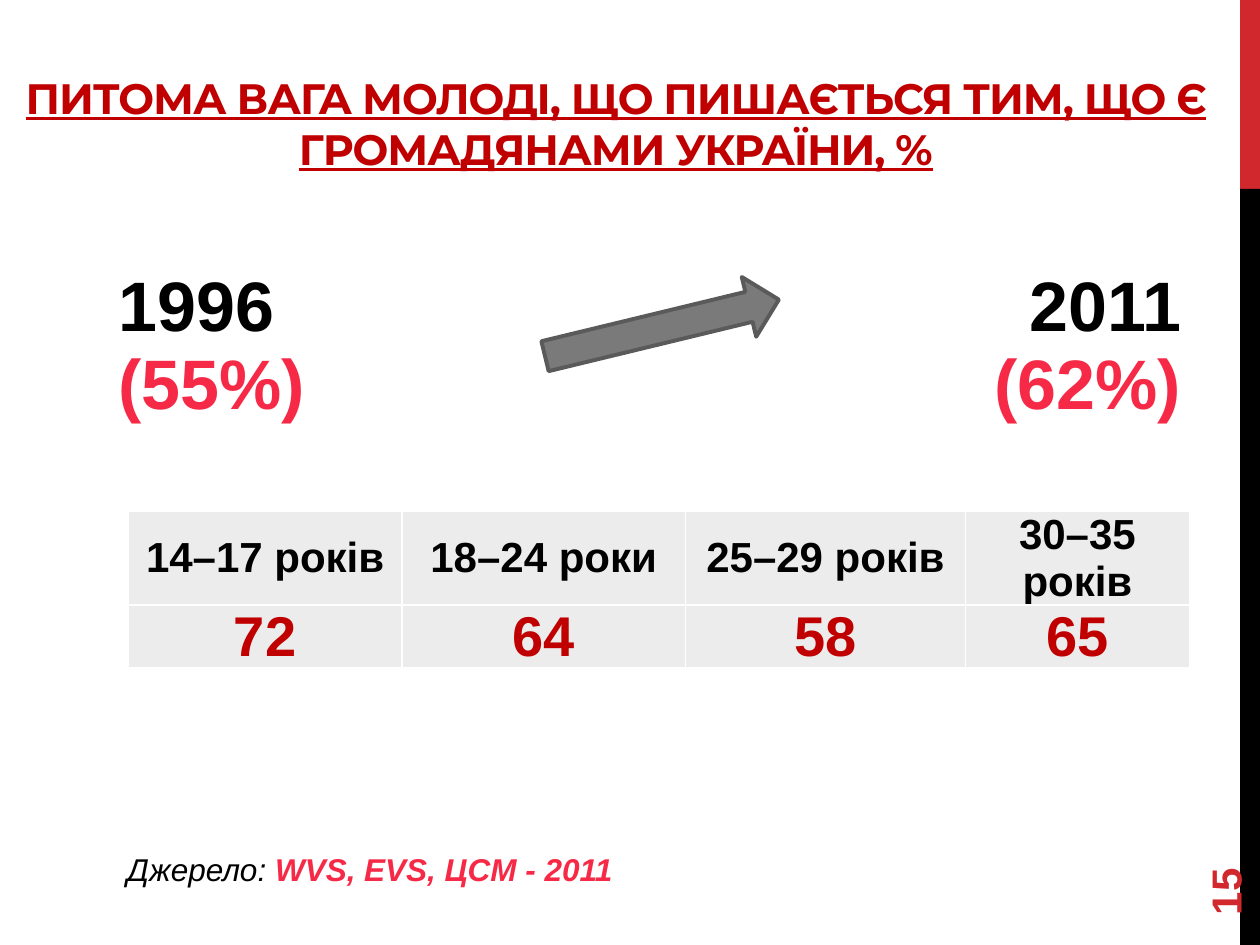
import dataclasses
import typing

import pptx
import pptx.dml.color
import pptx.enum.shapes
import pptx.enum.text
import pptx.util

Cm = pptx.util.Cm
ALIGN = pptx.enum.text.PP_ALIGN
ANCHOR = pptx.enum.text.MSO_ANCHOR
SHAPE = pptx.enum.shapes.MSO_SHAPE

COLORS = {
    "red": "D1282E",
    "dark_red": "C00000",
    "pink": "F62A47",
    "black": "000000",
    "white": "FFFFFF",
    "cell": "ECECEC",
    "arrow": "7A7A7A",
    "arrow_line": "5A5A5A",
}


@dataclasses.dataclass
class Box:
    """Position and size in centimetres."""
    left: float
    top: float
    width: float
    height: float

    def lengths(self) -> tuple:
        return tuple(Cm(value) for value in dataclasses.astuple(self))


@dataclasses.dataclass
class AgeGroup:
    label: str
    percent: str
    width: float


AGE_GROUPS = [
    AgeGroup("14–17 років", "72", 5.51),
    AgeGroup("18–24 роки", "64", 5.72),
    AgeGroup("25–29 років", "58", 5.64),
    AgeGroup("30–35 років", "65", 4.52),
]


def rgb(color: str) -> pptx.dml.color.RGBColor:
    return pptx.dml.color.RGBColor.from_string(COLORS[color])


def write(paragraph, text: str, *, size: float, color: str = "black", font: str = "Arial",
          bold: bool = True, italic: bool = False, underline: bool = False,
          align: typing.Any = ALIGN.LEFT):
    paragraph.alignment = align
    run = paragraph.add_run()
    run.text = text
    run.font.name, run.font.size = font, pptx.util.Pt(size)
    run.font.bold, run.font.italic, run.font.underline = bold, italic, underline
    run.font.color.rgb = rgb(color)
    return run


def add_shape(slide, kind, box: Box, fill: str, line: str = "", rotation: float = 0) -> None:
    shape = slide.shapes.add_shape(kind, *box.lengths())
    shape.shadow.inherit = False
    shape.rotation = rotation
    shape.fill.solid()
    shape.fill.fore_color.rgb = rgb(fill)
    if line:
        shape.line.color.rgb = rgb(line)
        shape.line.width = pptx.util.Pt(2.25)
    else:
        shape.line.fill.background()


def add_table(slide, left: float, top: float, widths: list, heights: list,
              fill: str, side: float, anchor):
    box = Box(left, top, sum(widths), sum(heights))
    table = slide.shapes.add_table(len(heights), len(widths), *box.lengths()).table
    table.first_row = table.horz_banding = False
    for column, width in zip(table.columns, widths):
        column.width = Cm(width)
    for row, height in zip(table.rows, heights):
        row.height = Cm(height)
    for cell in table.iter_cells():
        cell.fill.solid()
        cell.fill.fore_color.rgb = rgb(fill)
        cell.margin_left = cell.margin_right = Cm(side)
        cell.margin_top = cell.margin_bottom = 0
        cell.vertical_anchor = anchor
    return table


def add_text_box(slide, box: Box, anchor=ANCHOR.TOP, rotation: float = 0):
    text_box = slide.shapes.add_textbox(*box.lengths())
    text_box.rotation = rotation
    text_box.text_frame.word_wrap = True
    text_box.text_frame.vertical_anchor = anchor
    return text_box.text_frame.paragraphs[0]


def main() -> None:
    deck = pptx.Presentation()
    deck.slide_width, deck.slide_height = Cm(25.4), Cm(19.05)
    slide = deck.slides.add_slide(deck.slide_layouts[5])

    # Side bars
    add_shape(slide, SHAPE.RECTANGLE, Box(25, 0, 0.4, 3.81), "red")
    add_shape(slide, SHAPE.RECTANGLE, Box(25, 3.81, 0.4, 15.24), "black")

    # Title
    title = slide.shapes.title
    title.left, title.top, title.width, title.height = Box(-0.03, 2.13, 24.89, 2.82).lengths()
    heading = title.text_frame
    heading.word_wrap = True
    heading.auto_size = pptx.enum.text.MSO_AUTO_SIZE.NONE
    heading.vertical_anchor = ANCHOR.BOTTOM
    heading.margin_bottom = Cm(1.45)
    heading_run = write(
        heading.paragraphs[0],
        "ПИТОМА ВАГА МОЛОДІ, ЩО ПИШАЄТЬСЯ ТИМ, ЩО Є ГРОМАДЯНАМИ УКРАЇНИ, %",
        size=24.3, color="dark_red", font="Montserrat", underline=True, align=ALIGN.CENTER)
    heading_run.font._element.set("spc", "-60")

    # Change between the two years
    years = add_table(slide, 2.21, 5.41, [7.26] * 3, [3.38], "white", 0.18, ANCHOR.TOP)
    for column, year, share, align in [(0, "1996 ", "(55%)", ALIGN.LEFT),
                                       (2, "2011 ", "(62%)", ALIGN.RIGHT)]:
        paragraph = years.cell(0, column).text_frame.paragraphs[0]
        write(paragraph, year, size=40, align=align)
        write(paragraph, share, size=40, color="pink", align=align)
    add_shape(slide, SHAPE.RIGHT_ARROW, Box(10.92, 5.99, 4.85, 1.24),
              "arrow", line="arrow_line", rotation=346.4)

    # Shares by age group
    ages = add_table(slide, 2.59, 10.31, [group.width for group in AGE_GROUPS],
                     [1.88, 1.27], "cell", 0.03, ANCHOR.MIDDLE)
    for column, group in enumerate(AGE_GROUPS):
        write(ages.cell(0, column).text_frame.paragraphs[0], group.label,
              size=24, align=ALIGN.CENTER)
        write(ages.cell(1, column).text_frame.paragraphs[0], group.percent,
              size=32, color="dark_red", align=ALIGN.CENTER)

    # Source and page number
    source = add_text_box(slide, Box(2.31, 17.02, 19.81, 1.02))
    write(source, "Джерело: ", size=18, bold=False, italic=True)
    write(source, "WVS, EVS, ЦСМ - 2011", size=18, color="pink", italic=True)
    page = add_text_box(slide, Box(22.86, 16.36, 3.66, 1.02), ANCHOR.MIDDLE, rotation=270)
    write(page, "15", size=24, color="red")

    deck.save("out.pptx")


if __name__ == "__main__":
    main()
